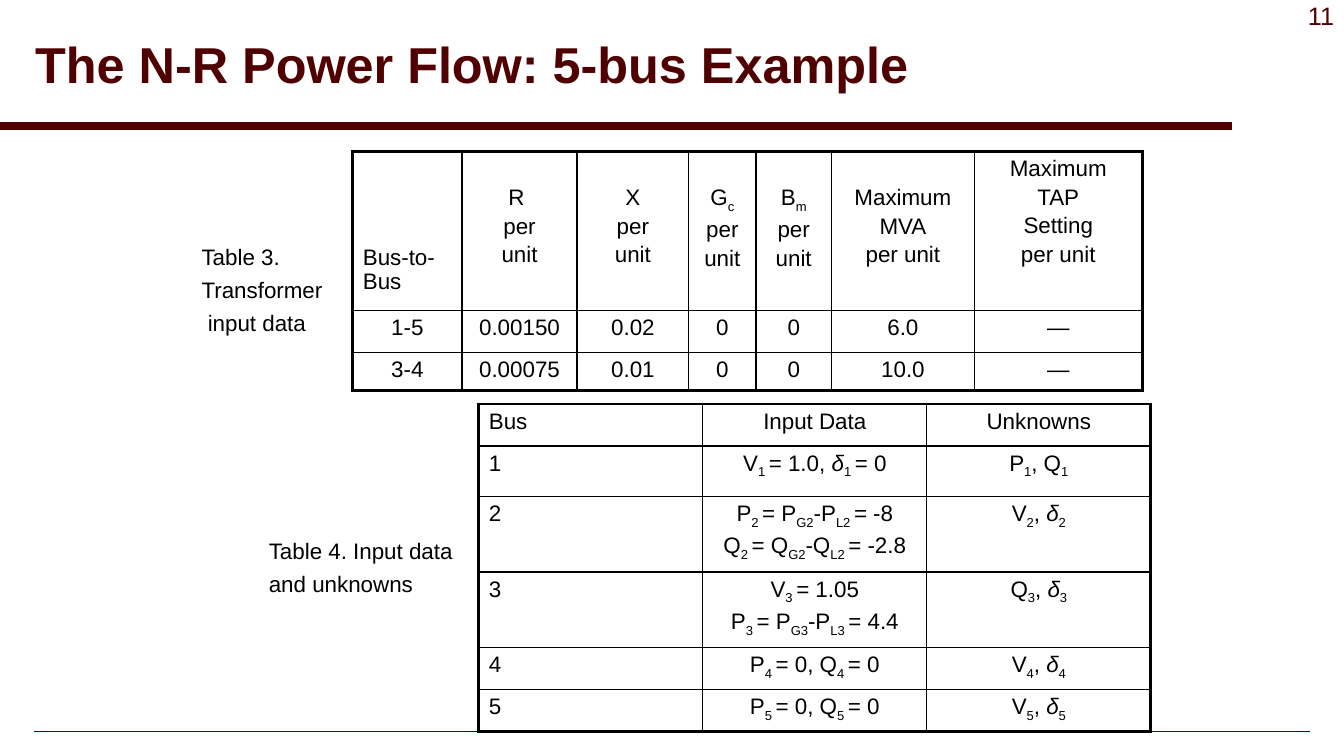
from itertools import groupby

from lxml.etree import SubElement
from pptx import Presentation
from pptx.dml.color import RGBColor
from pptx.enum.shapes import MSO_CONNECTOR, MSO_SHAPE
from pptx.enum.text import MSO_ANCHOR, PP_ALIGN
from pptx.oxml.ns import qn
from pptx.util import Inches, Pt

COLORS = {"maroon": "500000", "silver": "E3E1E1", "ink": "000000"}
GRID_COLUMNS, GRID_ROWS = 160, 90
LEFT, CENTER, RIGHT = PP_ALIGN.LEFT, PP_ALIGN.CENTER, PP_ALIGN.RIGHT


class SlideBuilder:
    """Draws styled elements on one slide, placed in grid columns and rows."""

    font = "Arial"
    body_size = 16
    inner_border, outer_border = 1, 2.25

    def __init__(self, deck):
        self.slide = deck.slides.add_slide(deck.slide_layouts[6])
        self.column = deck.slide_width / GRID_COLUMNS
        self.row = deck.slide_height / GRID_ROWS

    def place(self, left, top, width, height):
        return (round(left * self.column), round(top * self.row),
                round(width * self.column), round(height * self.row))

    def fill_text(self, frame, lines, align=LEFT, size=body_size, color="ink", bold=False, gap=2.7):
        frame.word_wrap = True
        for index, line in enumerate(lines):
            paragraph = frame.paragraphs[0] if index == 0 else frame.add_paragraph()
            paragraph.alignment = align
            paragraph.space_before = Pt(gap if index else 0)
            for level, piece in enumerate(line.split("~")):
                for is_angle, letters in groupby(piece, key=lambda letter: letter == "δ"):
                    run = paragraph.add_run()
                    run.text = "".join(letters)
                    run.font.name = self.font
                    run.font.size = Pt(size)
                    run.font.bold = bold
                    run.font.italic = is_angle
                    run.font.color.rgb = RGBColor.from_string(COLORS[color])
                    if level % 2:
                        run.font._element.set("baseline", "-25000")

    def text(self, area, lines, inset=0, anchor=MSO_ANCHOR.TOP, line_spacing=None, **style):
        frame = self.slide.shapes.add_textbox(*self.place(*area)).text_frame
        frame.margin_left = frame.margin_right = Inches(inset)
        frame.margin_top = frame.margin_bottom = 0
        frame.vertical_anchor = anchor
        self.fill_text(frame, lines, **style)
        for paragraph in frame.paragraphs:
            paragraph.line_spacing = line_spacing

    def rule(self, left, right, row, color, weight):
        x, y, width, _ = self.place(left, row, right - left, 0)
        line = self.slide.shapes.add_connector(MSO_CONNECTOR.STRAIGHT, x, y, x + width, y)
        line.line.color.rgb = RGBColor.from_string(COLORS[color])
        line.line.width = Pt(weight)
        SubElement(line._element.spPr, qn("a:effectLst"))

    def glow_bar(self, area, inner, outer):
        bar = self.slide.shapes.add_shape(MSO_SHAPE.RECTANGLE, *self.place(*area))
        bar.shadow.inherit = False
        bar.line.fill.background()
        bar.fill.gradient()
        for stop, color in zip(bar.fill.gradient_stops, (inner, outer)):
            stop.color.rgb = RGBColor.from_string(COLORS[color])
        gradient = bar._element.spPr.find(qn("a:gradFill"))
        gradient.remove(gradient.find(qn("a:lin")))
        spread = SubElement(gradient, qn("a:path"), {"path": "shape"})
        SubElement(spread, qn("a:fillToRect"), l="50000", t="50000", r="50000", b="50000")

    def border(self, cell, outer_sides):
        properties = cell._tc.get_or_add_tcPr()
        for side, is_outer in outer_sides.items():
            weight = self.outer_border if is_outer else self.inner_border
            edge = SubElement(properties, qn(f"a:ln{side}"), w=str(Pt(weight)))
            SubElement(SubElement(edge, qn("a:solidFill")), qn("a:srgbClr"), val=COLORS["ink"])

    def table(self, left, top, widths, heights, rows, first_column, header_drops=()):
        area = self.place(left, top, sum(widths), sum(heights))
        grid = self.slide.shapes.add_table(len(heights), len(widths), *area).table
        grid.first_row = grid.horz_banding = False
        for column, width in zip(grid.columns, widths):
            column.width = round(width * self.column)
        for row, height in zip(grid.rows, heights):
            row.height = round(height * self.row)
        for r, entries in enumerate(rows):
            for c, entry in enumerate(entries):
                cell = grid.cell(r, c)
                self.border(cell, {"L": c == 0, "R": c == len(widths) - 1,
                                   "T": r == 0, "B": r == len(heights) - 1})
                cell.fill.background()
                if r == 0 and header_drops:
                    cell.margin_top = Inches(header_drops[c])
                is_label = c == 0 and (r == 0 or first_column == LEFT)
                self.fill_text(cell.text_frame, entry.split("\n"), LEFT if is_label else CENTER)


TRANSFORMERS = [
    ["Bus-to-Bus", "R \nper\nunit", "X\nper\nunit", "G~c~\nper\nunit", "B~m~\nper\nunit",
     "Maximum\nMVA\nper unit", "Maximum\nTAP\nSetting\nper unit"],
    ["1-5", "0.00150", "0.02", "0", "0", "6.0", "—"],
    ["3-4", "0.00075", "0.01", "0", "0", "10.0", "—"],
]
BUSES = [
    ["Bus", "Input Data", "Unknowns"],
    ["1", "V~1 ~= 1.0, δ~1 ~= 0", "P~1~, Q~1~"],
    ["2", "P~2 ~= P~G2~-P~L2 ~= -8\nQ~2 ~= Q~G2~-Q~L2 ~= -2.8", "V~2~, δ~2~"],
    ["3", "V~3 ~= 1.05\nP~3 ~= P~G3~-P~L3 ~= 4.4", "Q~3~, δ~3~"],
    ["4", "P~4 ~= 0, Q~4 ~= 0", "V~4~, δ~4~"],
    ["5", "P~5 ~= 0, Q~5 ~= 0", "V~5~, δ~5~"],
]


def main():
    deck = Presentation()
    deck.slide_width, deck.slide_height = Inches(13.33), Inches(7.5)
    page = SlideBuilder(deck)
    page.glow_bar((4, 87, 152, 0.12), "maroon", "silver")
    page.rule(0, 146.67, 15, "maroon", 6)
    page.text((145.6, 0, 14.4, 4), ["11"], inset=0.1, align=RIGHT, size=18, color="maroon")
    page.table(42, 18, [13, 13.7, 13.3, 8, 9, 17, 20], [19, 5, 4.5], TRANSFORMERS,
               CENTER, [0.93] + [0.34] * 5 + [0.05])
    page.text((24, 29, 15, 11), ["Table 3.", "Transformer", " input data"], gap=4.1)
    page.table(57, 48.1, [26.67] * 3, [5, 6, 9, 9, 5, 5], BUSES, LEFT)
    page.text((32, 64, 23, 7), ["Table 4. Input data", "and unknowns"], gap=4.1)
    page.text((3, 1, 143, 14), ["The N-R Power Flow: 5-bus Example"], inset=0.1,
              anchor=MSO_ANCHOR.MIDDLE, line_spacing=0.9, size=36, color="maroon", bold=True)
    deck.save("out.pptx")


if __name__ == "__main__":
    main()
